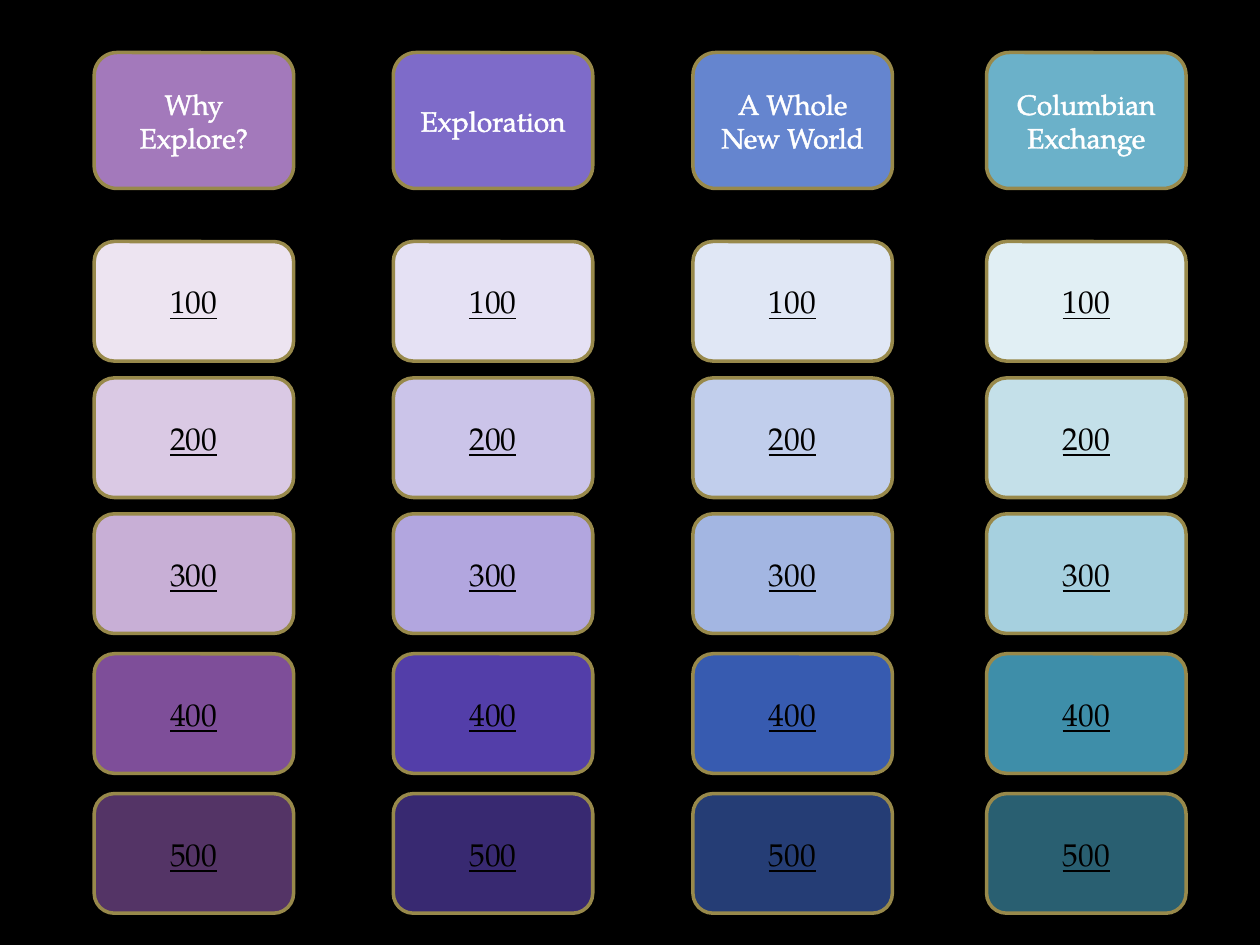
from lxml import etree
from pptx import Presentation
from pptx.dml.color import RGBColor
from pptx.enum.shapes import MSO_SHAPE as SHAPE
from pptx.enum.text import MSO_ANCHOR as ANCHOR, PP_ALIGN as ALIGN
from pptx.oxml.ns import qn
from pptx.util import Cm, Pt

COLORS = {
    "background": "000000",
    "border": "98894B",
    "header_text": "FFFFFF",
    "value_text": "000000",
    # header, then 100 to 500
    "purple": ["A379BB", "EDE4F1", "DAC9E4", "C8AFD6", "7E4E99", "543466"],
    "violet": ["7E6BC9", "E5E1F4", "CBC4E9", "B2A6DF", "533EA9", "382971"],
    "blue": ["6585CF", "E0E7F5", "C1CEEC", "A3B6E2", "375BB0", "253D75"],
    "teal": ["6BB1C9", "E1EFF4", "C4E0E9", "A6D0DF", "3E8EA9", "295F71"],
}
FONT = "TeX Gyre Pagella"
HEADER_FONT = {"name": FONT, "size": Pt(16)}
VALUE_FONT = {"name": FONT, "size": Pt(18), "underline": True}

CATEGORIES = [  # title, left in cm, palette
    ("Why Explore?", 1.9, "purple"),
    ("Exploration", 7.93, "violet"),
    ("A Whole New World", 13.97, "blue"),
    ("Columbian Exchange", 19.89, "teal"),
]
BOARD_TOP, TILE_WIDTH = 1.06, 4.02
HEADER_HEIGHT, VALUE_HEIGHT = 2.74, 2.41
VALUE_OFFSETS = [3.81, 6.56, 9.3, 12.12, 14.94]  # below the board top


def rgb(color):
    return RGBColor.from_string(color)


def outline_text(r, color, width):
    ln = etree.Element(qn("a:ln"), w=str(int(width)))
    fill = etree.SubElement(ln, qn("a:solidFill"))
    etree.SubElement(fill, qn("a:srgbClr"), val=color)
    r.font._element.insert(0, ln)


def add_tile(slide, box, text, fill, color, font):
    """Add a rounded tile in box (left, top, width, height in cm); return its run."""
    sp = slide.shapes.add_shape(SHAPE.ROUNDED_RECTANGLE, *map(Cm, box))
    sp.shadow.inherit = False
    sp.fill.solid()
    sp.fill.fore_color.rgb = rgb(fill)
    sp.line.color.rgb = rgb(COLORS["border"])
    sp.line.width = Pt(2)
    tf = sp.text_frame
    tf.word_wrap = True
    tf.vertical_anchor = ANCHOR.MIDDLE
    p = tf.paragraphs[0]
    p.alignment = ALIGN.CENTER
    r = p.add_run()
    r.text = text
    for name, value in font.items():
        setattr(r.font, name, value)
    r.font.color.rgb = rgb(color)
    return r


def add_category(slide, left, top, width, title, fills):
    """Add one column: a header tile above its five value tiles."""
    r = add_tile(slide, (left, top, width, HEADER_HEIGHT), title, fills[0],
                 COLORS["header_text"], HEADER_FONT)
    outline_text(r, COLORS["header_text"], Pt(0.75))
    for i, (offset, fill) in enumerate(zip(VALUE_OFFSETS, fills[1:]), 1):
        add_tile(slide, (left, top + offset, width, VALUE_HEIGHT), str(i * 100),
                 fill, COLORS["value_text"], VALUE_FONT)


def main():
    prs = Presentation()
    prs.slide_width, prs.slide_height = Cm(25.4), Cm(19.05)
    slide = prs.slides.add_slide(prs.slide_layouts[6])
    slide.background.fill.solid()
    slide.background.fill.fore_color.rgb = rgb(COLORS["background"])
    for title, left, palette in CATEGORIES:
        add_category(slide, left, BOARD_TOP, TILE_WIDTH, title, COLORS[palette])
    prs.save("out.pptx")


if __name__ == "__main__":
    main()
